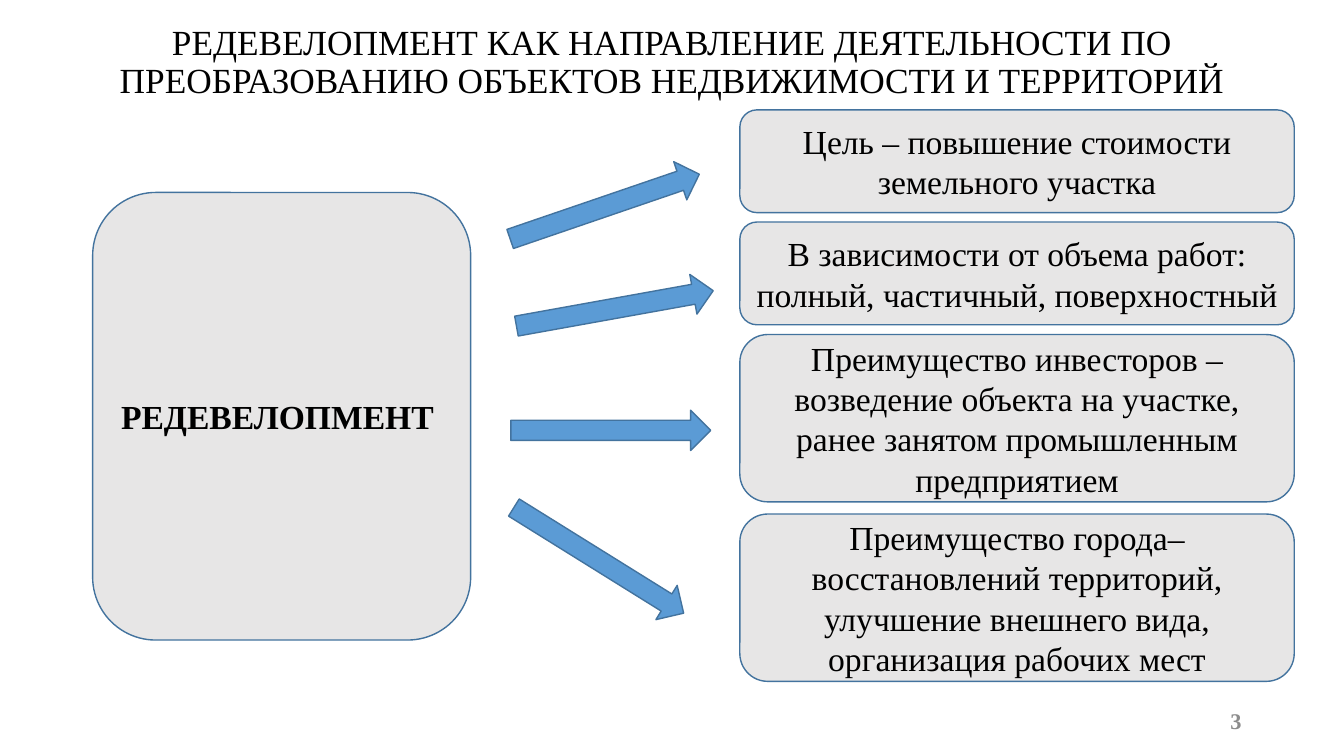
from pptx import Presentation
from pptx.dml.color import RGBColor
from pptx.enum.shapes import MSO_SHAPE
from pptx.enum.text import MSO_ANCHOR, PP_ALIGN
from pptx.util import Pt

THEME = {
    "font": "Times New Roman",
    "ink": "000000", "mute": "8C8C8C",
    "panel": "E7E6E6", "arrow": "5B9BD5", "edge": "43739E",
    "title": 25.2, "body": 24, "page": 16,
}

TITLE = ("РЕДЕВЕЛОПМЕНТ КАК НАПРАВЛЕНИЕ ДЕЯТЕЛЬНОСТИ ПО "
         "ПРЕОБРАЗОВАНИЮ ОБЪЕКТОВ НЕДВИЖИМОСТИ И ТЕРРИТОРИЙ")
TOPIC = "РЕДЕВЕЛОПМЕНТ "
PAGE = "3"
FACTS = [
    (78.5, 73.4, "Цель – повышение стоимости земельного участка"),
    (158.6, 73.4, "В зависимости от объема работ: полный, частичный, поверхностный"),
    (239, 119.5, "Преимущество инвесторов – возведение объекта на участке, "
                 "ранее занятом промышленным предприятием"),
    (367.2, 119.5, "Преимущество города– восстановлений территорий, "
                   "улучшение внешнего вида, организация рабочих мест"),
]
ARROWS = [(432, 147.6, -18.9), (439.2, 220.3, -10.2),
          (436.3, 307.4, 0), (427.7, 400.3, 31.9)]
SPAN, THICK = 142.8, 28.8
LEFT, WIDE = 528.5, 396


def put(item, values):
    for name, value in values.items():
        setattr(item, name, value)


def write(shape, text, size, color="ink", bold=False,
          align=PP_ALIGN.CENTER, lead=1.0):
    frame = shape.text_frame
    put(frame, {"word_wrap": True, "vertical_anchor": MSO_ANCHOR.MIDDLE})
    para = frame.paragraphs[0]
    put(para, {"text": text, "alignment": align, "line_spacing": lead})
    font = para.runs[0].font
    put(font, {"name": THEME["font"], "size": Pt(THEME[size]), "bold": bold})
    font.color.rgb = RGBColor.from_string(THEME[color])


def draw(slide, kind, box, fill):
    shape = slide.shapes.add_shape(kind, *map(Pt, box))
    shape.shadow.inherit = False
    shape.fill.solid()
    shape.fill.fore_color.rgb = RGBColor.from_string(THEME[fill])
    shape.line.color.rgb = RGBColor.from_string(THEME["edge"])
    shape.line.width = Pt(1)
    return shape


def label(slide, box, text, size, **style):
    write(slide.shapes.add_textbox(*map(Pt, box)), text, size, **style)


def panel(slide, box, text, bold=False):
    shape = draw(slide, MSO_SHAPE.ROUNDED_RECTANGLE, box, "panel")
    write(shape, text, "body", bold=bold)


def main():
    deck = Presentation()
    put(deck, {"slide_width": Pt(960), "slide_height": Pt(540)})
    slide = deck.slides.add_slide(deck.slide_layouts[6])

    label(slide, (66, 5.8, 828, 77.8), TITLE, "title", lead=0.9)
    label(slide, (678, 500.5, 216, 28.8), PAGE, "page",
          color="mute", bold=True, align=PP_ALIGN.RIGHT)
    panel(slide, (66.2, 137.5, 270, 319.7), TOPIC, bold=True)
    for top, high, text in FACTS:
        panel(slide, (LEFT, top, WIDE, high), text)
    for mid, row, turn in ARROWS:
        box = (mid - SPAN / 2, row - THICK / 2, SPAN, THICK)
        draw(slide, MSO_SHAPE.RIGHT_ARROW, box, "arrow").rotation = turn

    deck.save("out.pptx")


if __name__ == "__main__":
    main()
